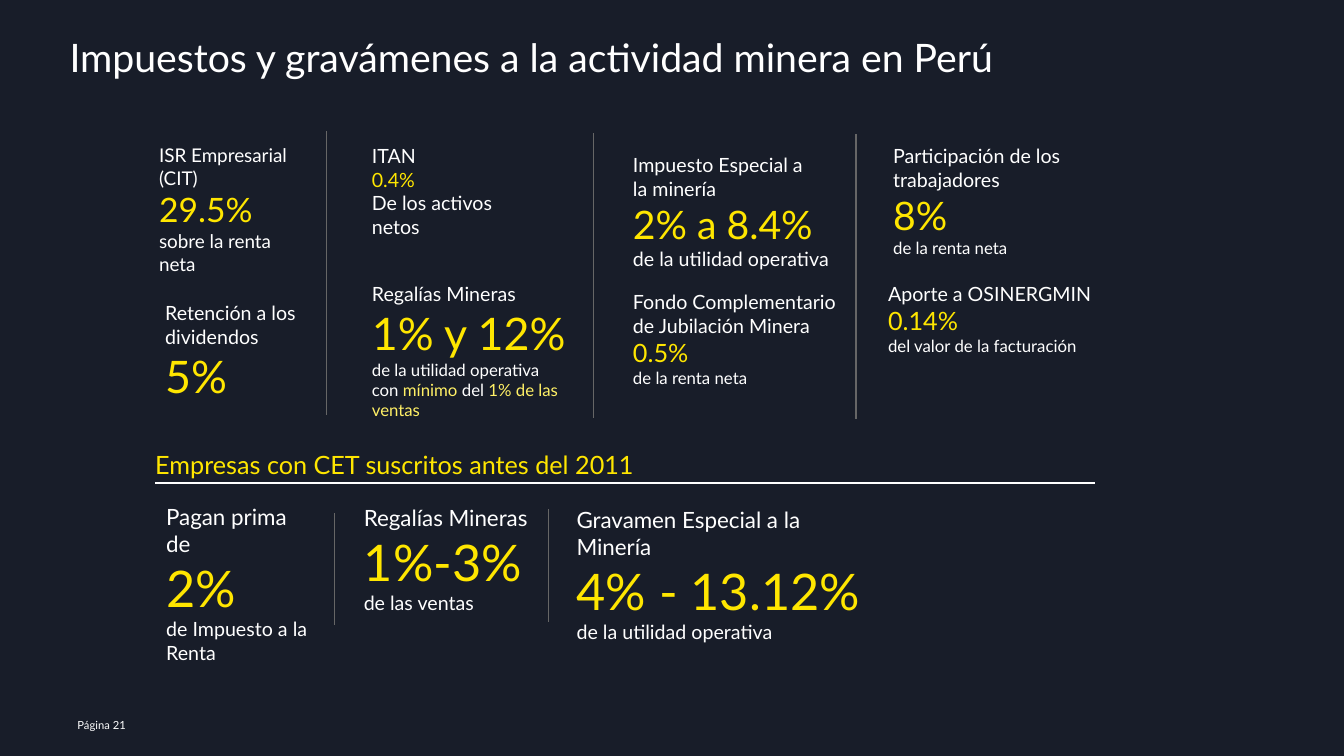
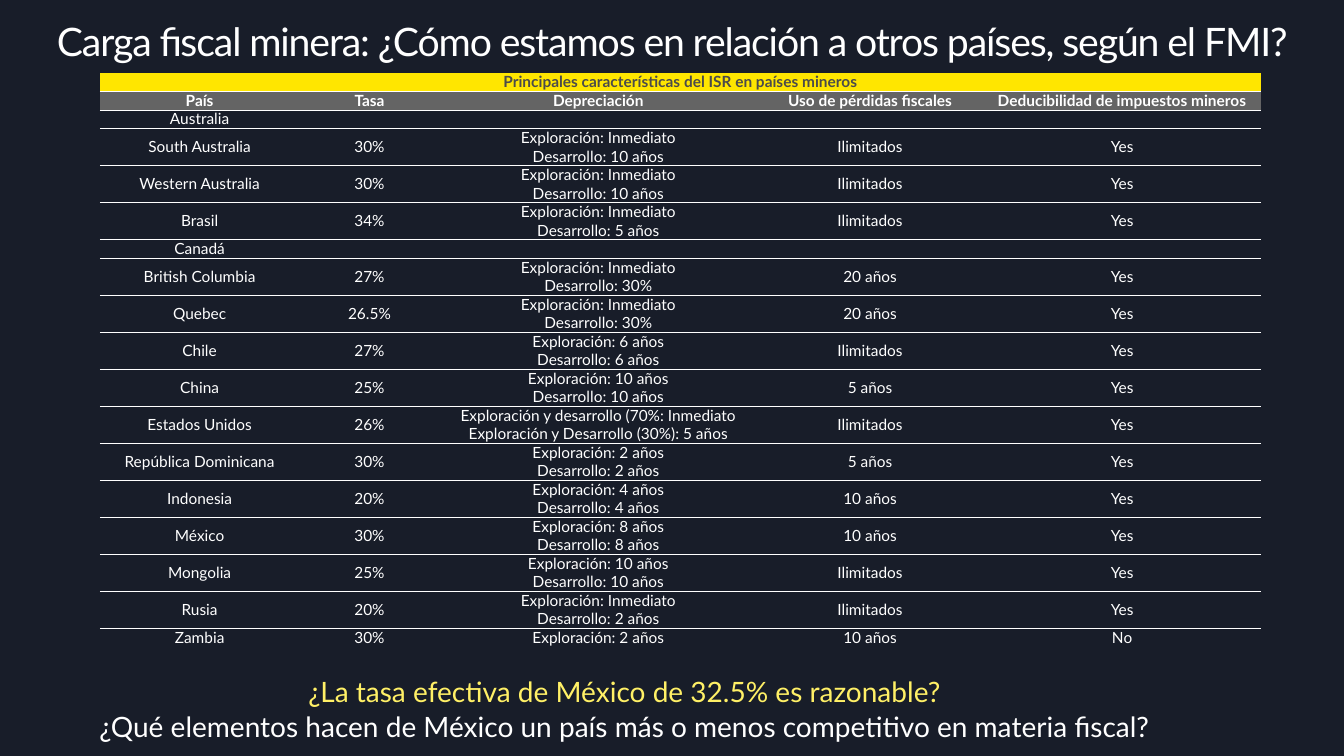
from lxml.etree import SubElement
from pptx import Presentation
from pptx.dml.color import RGBColor
from pptx.enum.shapes import MSO_CONNECTOR as Connector
from pptx.enum.text import MSO_ANCHOR as Anchor, PP_ALIGN as Align
from pptx.oxml.ns import qn
from pptx.util import Inches, Pt

NIGHT = RGBColor(0x18, 0x1D, 0x29)
WHITE = RGBColor(0xFF, 0xFF, 0xFF)
YELLOW = RGBColor(0xFF, 0xE6, 0x00)
PALE_YELLOW = RGBColor(0xFF, 0xF0, 0x66)
RULE_GREY = RGBColor(0x66, 0x66, 0x66)
HEADER_GREY = RGBColor(0x64, 0x64, 0x64)
DARK_GREY = RGBColor(0x4B, 0x4B, 0x4B)
FONT = "Lato"
NO_STYLE = "{2D5ABB26-0587-4C30-8999-92F81FD0307C}"
TABLE_SIZE = 11

# Each block: left, top, width, height, then lines of (text, size, colour).
TAX_BLOCKS = [
    (1.48, 1.38, 1.7, 1.19, [
        ("ISR Empresarial (CIT)", 13.5, WHITE),
        ("29.5%", 24, YELLOW),
        ("sobre la renta neta", 13.5, WHITE)]),
    (1.54, 2.94, 1.6, 1.11, [
        ("Retención a los dividendos", 14, WHITE),
        ("5%", 32, YELLOW)]),
    (3.59, 1.38, 1.7, 1.08, [
        ("ITAN", 14, WHITE),
        ("0.4%", 14, YELLOW),
        ("De los activos netos", 14, WHITE)]),
    (3.59, 2.75, 2.13, 1.48, [
        ("Regalías Mineras", 14, WHITE),
        ("1% y 12%", 32, YELLOW),
        [("de la utilidad operativa con ", 12, WHITE),
         ("mínimo", 12, PALE_YELLOW),
         (" del ", 12, WHITE),
         ("1% de las ventas", 12, PALE_YELLOW)]]),
    (6.18, 1.47, 2.66, 1.28, [
        ("Impuesto Especial a", 14, WHITE),
        ("la minería", 14, WHITE),
        ("2% a 8.4%", 28, YELLOW),
        ("de la utilidad operativa", 14, WHITE)]),
    (6.18, 2.83, 2.26, 1.11, [
        ("Fondo Complementario", 14, WHITE),
        ("de Jubilación Minera", 14, WHITE),
        ("0.5%", 18, YELLOW),
        ("de la renta neta", 12, WHITE)]),
    (8.76, 1.38, 2.14, 1.24, [
        ("Participación de los trabajadores", 14, WHITE),
        ("8%", 28, YELLOW),
        ("de la renta neta", 12, WHITE)]),
    (8.71, 2.75, 2.34, 0.84, [
        ("Aporte a OSINERGMIN", 14, WHITE),
        ("0.14%", 18, YELLOW),
        ("del valor de la facturación", 12, WHITE)]),
    (1.55, 4.94, 1.67, 1.72, [
        ("Pagan prima de", 16, WHITE),
        ("2%", 36, YELLOW),
        ("de Impuesto a la Renta", 14, WHITE)]),
    (3.51, 4.95, 1.84, 1.48, [
        ("Regalías Mineras", 16, WHITE),
        ("1%-3%", 36, YELLOW),
        ("de las ventas", 14, WHITE)]),
    (5.62, 4.97, 3.19, 1.62, [
        ("Gravamen Especial a la Minería", 16, WHITE),
        ("4% - 13.12%", 36, YELLOW),
        ("de la utilidad operativa", 14, WHITE)]),
]

# Each divider: x, top, bottom.
DIVIDERS = [(3.24, 1.3, 4.12), (5.89, 1.32, 4.15), (8.49, 1.33, 4.16),
            (3.32, 5.09, 6.2), (5.44, 5.05, 6.17)]

COLUMN_WIDTHS = [1.98, 1.39, 3.15, 2.24, 2.76]
ROW_HEIGHT, TALL_ROW_HEIGHT = 0.17, 0.35
TABLE_ROWS = [
    ("Principales características del ISR en países mineros",),
    ("País", "Tasa", "Depreciación", "Uso de pérdidas fiscales",
     "Deducibilidad de impuestos mineros"),
    ("Australia",),
    ("South Australia", "30%", "Exploración: Inmediato\nDesarrollo: 10 años", "Ilimitados", "Yes"),
    ("Western Australia", "30%", "Exploración: Inmediato\nDesarrollo: 10 años", "Ilimitados", "Yes"),
    ("Brasil", "34%", "Exploración: Inmediato\nDesarrollo: 5 años", "Ilimitados", "Yes"),
    ("Canadá",),
    ("British Columbia", "27%", "Exploración: Inmediato\nDesarrollo: 30%", "20 años", "Yes"),
    ("Quebec", "26.5%", "Exploración: Inmediato\nDesarrollo: 30%", "20 años", "Yes"),
    ("Chile", "27%", "Exploración: 6 años\nDesarrollo: 6 años", "Ilimitados", "Yes"),
    ("China", "25%", "Exploración: 10 años\nDesarrollo: 10 años", "5 años", "Yes"),
    ("Estados Unidos", "26%",
     "Exploración y desarrollo (70%: Inmediato\nExploración y Desarrollo (30%): 5 años",
     "Ilimitados", "Yes"),
    ("República Dominicana", "30%", "Exploración: 2 años\nDesarrollo: 2 años", "5 años", "Yes"),
    ("Indonesia", "20%", "Exploración: 4 años\nDesarrollo: 4 años", "10 años", "Yes"),
    ("México", "30%", "Exploración: 8 años\nDesarrollo: 8 años", "10 años", "Yes"),
    ("Mongolia", "25%", "Exploración: 10 años\nDesarrollo: 10 años", "Ilimitados", "Yes"),
    ("Rusia", "20%", "Exploración: Inmediato\nDesarrollo: 2 años", "Ilimitados", "Yes"),
    ("Zambia", "30%", "Exploración: 2 años", "10 años", "No"),
]


def set_attributes(target, values):
    for name, value in values.items():
        setattr(target, name, value)


def add_run(paragraph, text, size, color, bold=False):
    run = paragraph.add_run()
    run.text = text
    set_attributes(run.font, {"name": FONT, "size": Pt(size), "bold": bold})
    run.font.color.rgb = color
    return run


def add_text(slide, left, top, width, height, lines, margins=None, **paragraph_format):
    """Add a text box; a line is one (text, size, colour) run or a list of them."""
    box = slide.shapes.add_textbox(Inches(left), Inches(top), Inches(width), Inches(height))
    frame = box.text_frame
    frame.word_wrap = True
    if margins is not None:
        sides = ("margin_left", "margin_top", "margin_right", "margin_bottom")
        set_attributes(frame, dict(zip(sides, map(Inches, margins))))
    for index, line in enumerate(lines):
        paragraph = frame.add_paragraph() if index else frame.paragraphs[0]
        set_attributes(paragraph, paragraph_format)
        for run in line if isinstance(line, list) else [line]:
            add_run(paragraph, *run)
    return box


def add_title(slide, text, left, top, width, alignment=Align.LEFT, tracking=0):
    """Add the slide title; tracking is in hundredths of a point."""
    title = add_text(slide, left, top, width, 0.47, [(text, 28, WHITE)], (0, 0, 0, 0),
                     alignment=alignment, line_spacing=0.85)
    if tracking:
        run = title.text_frame.paragraphs[0].runs[0]
        run._r.get_or_add_rPr().set("spc", str(tracking))


def add_line(slide, start, end, color, width):
    points = [Inches(value) for value in (*start, *end)]
    line = slide.shapes.add_connector(Connector.STRAIGHT, *points)
    line.line.color.rgb = color
    line.line.width = Pt(width)
    SubElement(line._element.spPr, qn("a:effectLst"))


def add_border(cell, tag):
    border = SubElement(cell._tc.get_or_add_tcPr(), qn(tag), w=str(Pt(0.25)))
    fill = SubElement(border, qn("a:solidFill"))
    SubElement(fill, qn("a:srgbClr"), val=str(WHITE))


def format_cell(cell, text, color, fill, bold):
    set_attributes(cell, {"margin_left": 0, "margin_top": 0, "margin_right": 0,
                          "margin_bottom": 0, "vertical_anchor": Anchor.MIDDLE})
    for index, line in enumerate(text.split("\n")):
        frame = cell.text_frame
        paragraph = frame.add_paragraph() if index else frame.paragraphs[0]
        paragraph.alignment = Align.CENTER
        if line:
            add_run(paragraph, line, TABLE_SIZE, color, bold)
        else:
            SubElement(paragraph._p, qn("a:endParaRPr"), sz=str(TABLE_SIZE * 100))
    if fill is None:
        cell.fill.background()
    else:
        cell.fill.solid()
        cell.fill.fore_color.rgb = fill


def add_tax_table(slide, left, top):
    heights = [TALL_ROW_HEIGHT if any("\n" in text for text in row) else ROW_HEIGHT
               for row in TABLE_ROWS]
    frame = slide.shapes.add_table(
        len(TABLE_ROWS), len(COLUMN_WIDTHS), Inches(left), Inches(top),
        Inches(sum(COLUMN_WIDTHS)), Inches(sum(heights)))
    table = frame.table
    set_attributes(table, {"first_row": False, "horz_banding": False})
    table._tbl.tblPr.find(qn("a:tableStyleId")).text = NO_STYLE
    for column, width in zip(table.columns, COLUMN_WIDTHS):
        column.width = Inches(width)

    header_styles = {0: (DARK_GREY, YELLOW, True), 1: (WHITE, HEADER_GREY, True)}
    last_row = len(TABLE_ROWS) - 1
    last_column = len(COLUMN_WIDTHS) - 1
    for row_index, (values, height) in enumerate(zip(TABLE_ROWS, heights)):
        table.rows[row_index].height = Inches(height)
        style = header_styles.get(row_index, (WHITE, None, False))
        for column_index in range(last_column + 1):
            cell = table.cell(row_index, column_index)
            if row_index > 0:
                add_border(cell, "a:lnT")
            if row_index < last_row:
                add_border(cell, "a:lnB")
            text = values[column_index] if column_index < len(values) else ""
            format_cell(cell, text, *style)
        if len(values) == 1:
            first = 0 if row_index == 0 else 1
            table.cell(row_index, first).merge(table.cell(row_index, last_column))


def build_taxes_slide(slide):
    add_title(slide, "Impuestos y gravámenes a la actividad minera en Perú", 0.69, 0.4, 11.01)
    for block in TAX_BLOCKS:
        add_text(slide, *block)
    for x, top, bottom in DIVIDERS:
        add_line(slide, (x, top), (x, bottom), RULE_GREY, 0.75)
    add_text(slide, 1.54, 4.46, 10.17, 0.3,
             [("Empresas con CET suscritos antes del 2011", 18, YELLOW)],
             (0, 0.04, 0, 0), line_spacing=0.85, space_after=Pt(6))
    add_line(slide, (1.54, 4.79), (10.86, 4.79), WHITE, 1.5)
    add_text(slide, 0.67, 7.08, 0.93, 0.2, [("Página 21", 8, WHITE)])


def build_comparison_slide(slide):
    add_title(slide, "Carga fiscal minera: ¿Cómo estamos en relación a otros países, según el FMI?",
              0.07, 0.24, 13.19, Align.CENTER, tracking=-80)
    add_tax_table(slide, 0.99, 0.72)
    add_text(slide, 0.2, 6.64, 11.99, 0.79, [
        ("¿La tasa efectiva de México de 32.5% es razonable?", 20, PALE_YELLOW),
        ("¿Qué elementos hacen de México un país más o menos competitivo en materia fiscal?",
         20, WHITE)], alignment=Align.CENTER, space_after=Pt(1))


def main():
    presentation = Presentation()
    presentation.slide_width = Inches(13.33)
    presentation.slide_height = Inches(7.5)
    background = presentation.slide_master.background.fill
    background.solid()
    background.fore_color.rgb = NIGHT
    blank_layout = presentation.slide_layouts[6]
    for build in (build_taxes_slide, build_comparison_slide):
        build(presentation.slides.add_slide(blank_layout))
    presentation.save("out.pptx")


if __name__ == "__main__":
    main()
